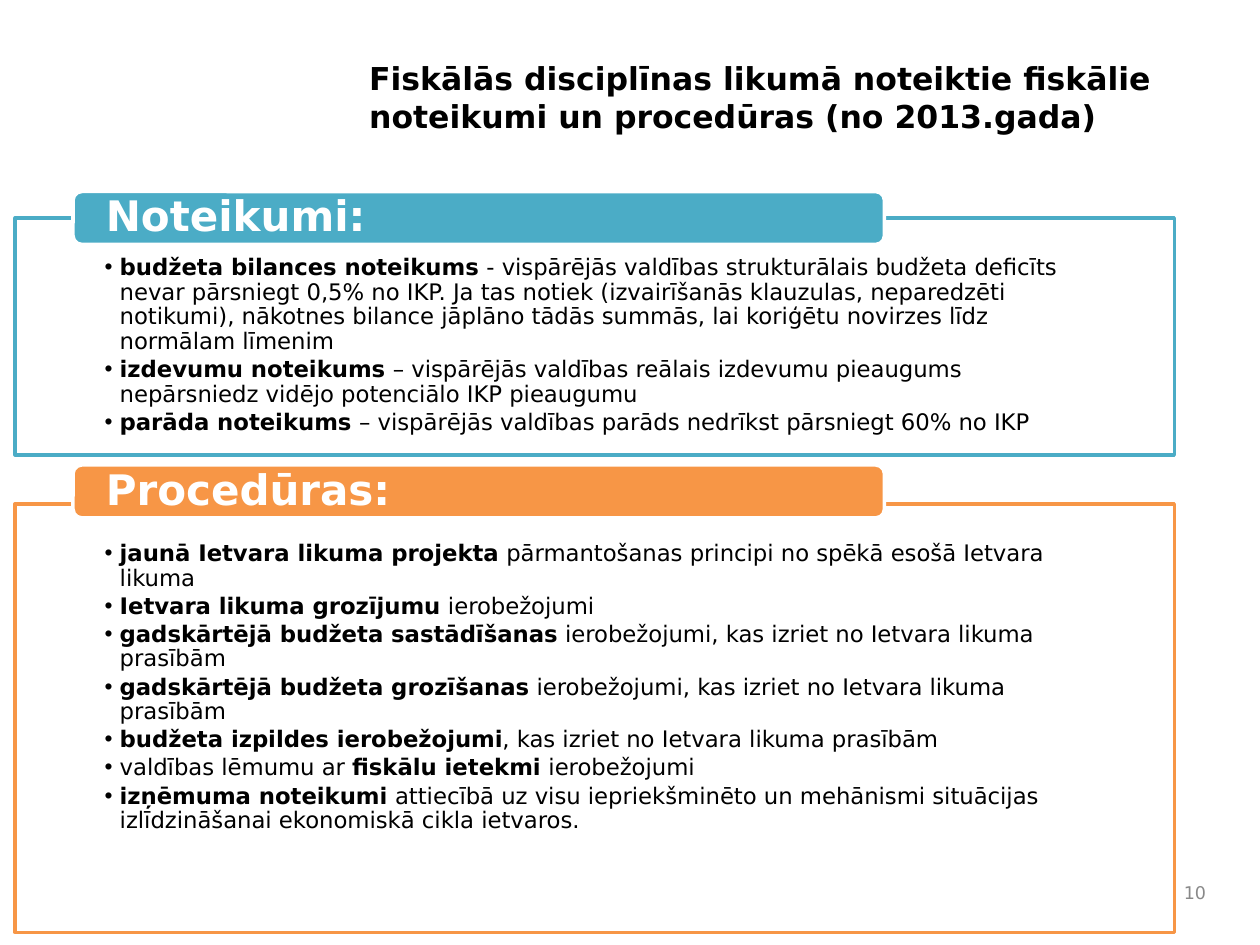
import pptx
import pptx.util
import pptx.dml.color
import pptx.enum.shapes
import pptx.enum.text
import lxml.etree

Inches, Pt = pptx.util.Inches, pptx.util.Pt
ANCHOR, ALIGN = pptx.enum.text.MSO_ANCHOR, pptx.enum.text.PP_ALIGN
W, H = Inches(10), Inches(7.5)
FONT = "DejaVu Sans"

RULES = [
    "*budžeta bilances noteikums *- vispārējās valdības strukturālais budžeta deficīts nevar "
    "pārsniegt 0,5% no IKP. Ja tas notiek (izvairīšanās klauzulas, neparedzēti notikumi), "
    "nākotnes bilance jāplāno tādās summās, lai koriģētu novirzes līdz normālam līmenim",
    "*izdevumu noteikums *– vispārējās valdības reālais izdevumu pieaugums nepārsniedz "
    "vidējo potenciālo IKP pieaugumu",
    "*parāda noteikums *– vispārējās valdības parāds nedrīkst pārsniegt 60% no IKP",
]
PROCEDURES = [
    "*jaunā Ietvara likuma projekta *pārmantošanas principi no spēkā esošā Ietvara likuma",
    "*Ietvara likuma grozījumu *ierobežojumi",
    "*gadskārtējā budžeta sastādīšanas *ierobežojumi, kas izriet no Ietvara likuma prasībām",
    "*gadskārtējā budžeta grozīšanas *ierobežojumi, kas izriet no Ietvara likuma prasībām",
    "*budžeta izpildes ierobežojumi*, kas izriet no Ietvara likuma prasībām",
    "valdības lēmumu ar *fiskālu ietekmi *ierobežojumi",
    "*izņēmuma noteikumi *attiecībā uz visu iepriekšminēto un mehānismi situācijas "
    "izlīdzināšanai ekonomiskā cikla ietvaros.",
]


def rgb(hex_text):
    return pptx.dml.color.RGBColor.from_string(hex_text)


def share(x, y, w, h):
    return [int(v * side / 100) for v, side in zip((x, y, w, h), (W, H, W, H))]


def place(sp, box):
    sp.left, sp.top, sp.width, sp.height = box


def paint(sp, fill, line):
    sp.fill.solid()
    sp.fill.fore_color.rgb = rgb(fill)
    sp.line.color.rgb = rgb(line)
    sp.line.width = Pt(2)


def add_bullet(p):
    pPr = p._p.get_or_add_pPr()
    indent = Inches(0.12)
    pPr.set("marL", str(indent))
    pPr.set("indent", str(-indent))
    bu = lxml.etree.SubElement(pPr, pptx.oxml.ns.qn("a:buChar"))
    bu.set("char", "•")


def write(tf, paragraphs, size, color="000000", align=ALIGN.LEFT, anchor=ANCHOR.TOP,
          inset=(0.1, 0.05, 0.1, 0.05), spacing=1.0, after=0, bullet=False):
    tf.word_wrap = True
    tf.auto_size = pptx.enum.text.MSO_AUTO_SIZE.NONE
    tf.vertical_anchor = anchor
    tf.margin_left, tf.margin_top, tf.margin_right, tf.margin_bottom = map(Inches, inset)
    for i, text in enumerate(paragraphs):
        p = tf.add_paragraph() if i else tf.paragraphs[0]
        if bullet:
            p.level = 1
            add_bullet(p)
        p.alignment = align
        p.line_spacing = spacing
        p.space_before, p.space_after = Pt(0), Pt(after)
        for k, part in enumerate(text.split("*")):
            if part:
                r = p.add_run()
                r.text = part
                r.font.name, r.font.size = FONT, Pt(size)
                r.font.bold = k % 2 == 1
                r.font.color.rgb = rgb(color)


def add_title(slide, box):
    place(slide.shapes.title, box)
    write(slide.shapes.title.text_frame,
          ["*Fiskālās disciplīnas likumā noteiktie fiskālie noteikumi un procedūras "
           "(no 2013.gada)*"], 18)


def add_panel(slide, body, box, drop, heading, items, color):
    x, y, w, h = box
    drop = int(H * drop / 100)
    place(body, (x, y + drop, w, h - drop))
    paint(body, "FFFFFF", color)
    write(body.text_frame, items, 13, inset=(0.71, 0.3, 0.71, 0.1),
          spacing=0.9, after=2, bullet=True)
    sp = slide.shapes.add_shape(pptx.enum.shapes.MSO_SHAPE.ROUNDED_RECTANGLE,
                                x + int(w * 0.05), y, int(w * 0.7), int(H * 0.056))
    sp.shadow.inherit = False
    paint(sp, color, "FFFFFF")
    write(sp.text_frame, [f"*{heading}*"], 24, "FFFFFF", anchor=ANCHOR.MIDDLE,
          inset=(0.24, 0, 0.24, 0), spacing=0.9)


def add_number(slide, box):
    sp = slide.shapes.add_textbox(*box)
    write(sp.text_frame, ["10"], 10, "898989", ALIGN.RIGHT, ANCHOR.MIDDLE)


def main():
    prs = pptx.Presentation()
    prs.slide_width, prs.slide_height = W, H
    slide = prs.slides.add_slide(prs.slide_layouts[3])
    rules, procedures = slide.placeholders[1], slide.placeholders[2]
    add_title(slide, share(28.3, 5.6, 66.7, 10))
    add_number(slide, share(92.1, 92.27, 4.6, 4.4))
    add_panel(slide, rules, share(1.2, 20.27, 92, 27.87), 2.8,
              "Noteikumi:", RULES, "4BACC6")
    add_panel(slide, procedures, share(1.2, 49.2, 92, 49.47), 4.13,
              "Procedūras:", PROCEDURES, "F79646")
    prs.save("out.pptx")


if __name__ == "__main__":
    main()
